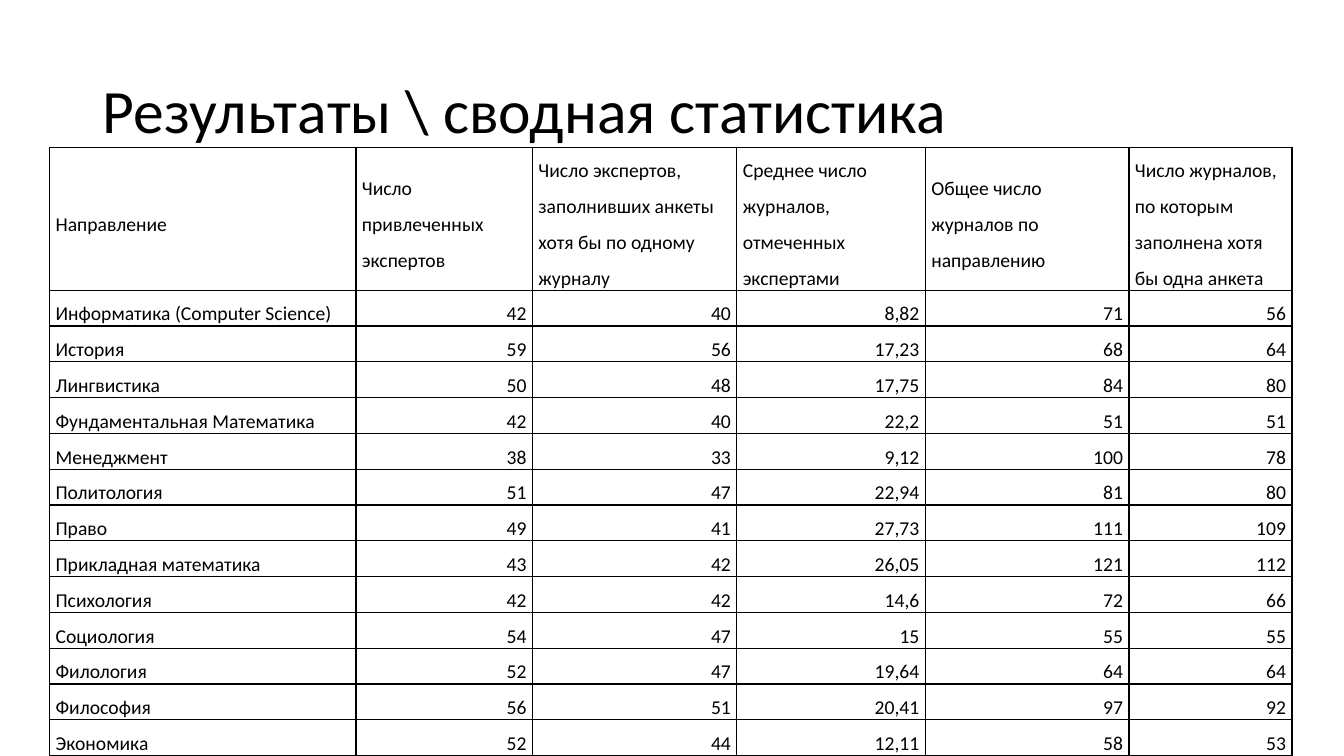
from lxml import etree
from pptx import Presentation
from pptx.dml.color import RGBColor
from pptx.enum.text import MSO_ANCHOR, MSO_AUTO_SIZE, PP_ALIGN
from pptx.oxml.ns import qn
from pptx.util import Cm, Pt

MIDDLE = MSO_ANCHOR.MIDDLE
LEFT, RIGHT = PP_ALIGN.LEFT, PP_ALIGN.RIGHT
NO_AUTOFIT = MSO_AUTO_SIZE.NONE
FONT = "Calibri"
COLORS = {"text": "000000", "border": "000000"}

HEADERS = [
    "Направление",
    "Число привлеченных экспертов",
    "Число экспертов, заполнивших анкеты хотя бы по одному журналу",
    "Cреднее число журналов, отмеченных экспертами",
    "Общее число журналов по направлению",
    "Число журналов, по которым заполнена хотя бы одна анкета",
]
FIELDS = [
    ("Информатика (Computer Science)", "42", "40", "8,82", "71", "56"),
    ("История", "59", "56", "17,23", "68", "64"),
    ("Лингвистика", "50", "48", "17,75", "84", "80"),
    ("Фундаментальная Математика", "42", "40", "22,2", "51", "51"),
    ("Менеджмент", "38", "33", "9,12", "100", "78"),
    ("Политология", "51", "47", "22,94", "81", "80"),
    ("Право", "49", "41", "27,73", "111", "109"),
    ("Прикладная математика", "43", "42", "26,05", "121", "112"),
    ("Психология", "42", "42", "14,6", "72", "66"),
    ("Социология", "54", "47", "15", "55", "55"),
    ("Филология", "52", "47", "19,64", "64", "64"),
    ("Философия", "56", "51", "20,41", "97", "92"),
    ("Экономика", "52", "44", "12,11", "58", "53"),
]
COLUMN_WIDTHS = [7.72, 4.45, 5.15, 4.75, 5.13, 4.11]
HEADER_HEIGHT, FIELD_HEIGHT = 2.92, 0.84


def format_paragraph(paragraph, size, align, spacing):
    paragraph.alignment = align
    paragraph.line_spacing = spacing
    for run in paragraph.runs:
        run.font.name = FONT
        run.font.size = Pt(size)
        run.font.bold = False
        run.font.color.rgb = RGBColor.from_string(COLORS["text"])


def add_borders(cell):
    properties = cell._tc.get_or_add_tcPr()
    for position, side in enumerate(("a:lnL", "a:lnR", "a:lnT", "a:lnB")):
        line = etree.Element(qn(side), w=str(Pt(1)))
        fill = etree.SubElement(line, qn("a:solidFill"))
        etree.SubElement(fill, qn("a:srgbClr"), val=COLORS["border"])
        properties.insert(position, line)


presentation = Presentation()
presentation.slide_width = Cm(33.87)
presentation.slide_height = Cm(19.05)
slide = presentation.slides.add_slide(presentation.slide_layouts[5])

# Title
title = slide.shapes.title
title.left, title.top, title.width, title.height = Cm(2.33), Cm(1.01), Cm(29.21), Cm(3.68)
title.text_frame.text = "Результаты \\ сводная статистика"
title.text_frame.vertical_anchor = MIDDLE
title.text_frame.auto_size = NO_AUTOFIT
format_paragraph(title.text_frame.paragraphs[0], 44, LEFT, 0.9)

# Summary table
rows = [HEADERS, *FIELDS]
statistics = slide.shapes.add_table(
    len(rows), len(HEADERS), Cm(1.25), Cm(3.71), Cm(sum(COLUMN_WIDTHS)),
    Cm(HEADER_HEIGHT + FIELD_HEIGHT * len(FIELDS))).table
statistics.first_row = False
statistics.horz_banding = False

for column, width in zip(statistics.columns, COLUMN_WIDTHS):
    column.width = Cm(width)

for row_index, values in enumerate(rows):
    statistics.rows[row_index].height = Cm(FIELD_HEIGHT if row_index else HEADER_HEIGHT)
    for column_index, value in enumerate(values):
        cell = statistics.cell(row_index, column_index)
        cell.text_frame.text = value
        cell.vertical_anchor = MIDDLE
        cell.margin_left = cell.margin_right = Cm(0.15)
        cell.margin_top = cell.margin_bottom = 0
        cell.fill.background()
        add_borders(cell)
        align = RIGHT if row_index and column_index else LEFT
        format_paragraph(cell.text_frame.paragraphs[0], 14, align, 1.5)

presentation.save("out.pptx")
